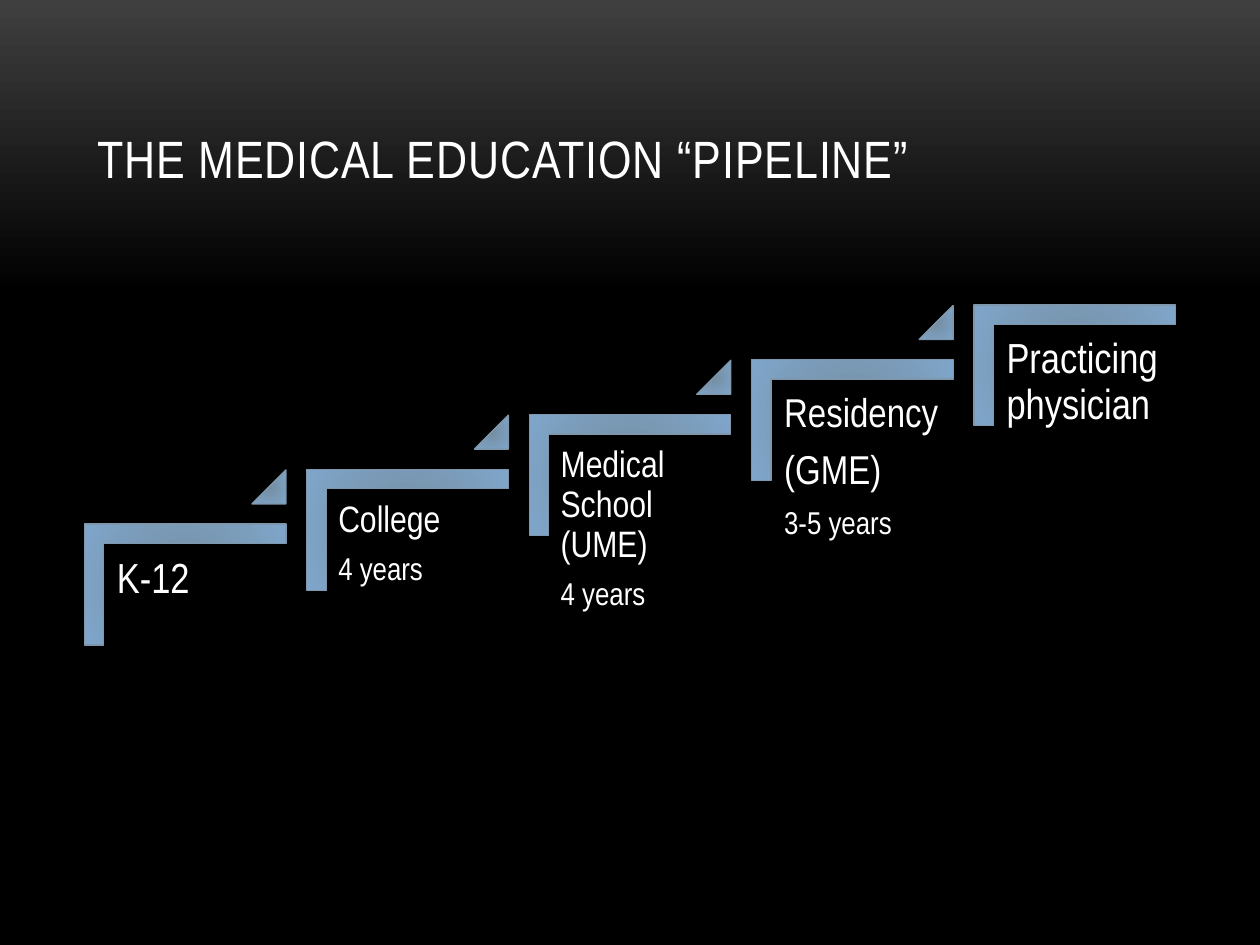
from typing import NamedTuple

from lxml.etree import SubElement
from pptx import Presentation
from pptx.dml.color import RGBColor
from pptx.enum.shapes import MSO_SHAPE as Preset
from pptx.enum.text import MSO_ANCHOR as Anchor, PP_ALIGN as Align
from pptx.oxml import parse_xml
from pptx.oxml.ns import nsdecls, qn
from pptx.util import Inches, Pt

FONT = "Arial Narrow"
WHITE = "FFFFFF"
FIRST_LEFT, FIRST_TOP = 0.99, 3.84
LAST_LEFT, LAST_TOP = 8.05, 2.1


class Line(NamedTuple):
    text: str
    size: int


class Step(NamedTuple):
    lines: list[Line]
    inset: float = 0.1


STEPS = [
    Step([Line("K-12", 24)]),
    Step([Line("College", 21), Line("4 years", 18)], 0.09),
    Step([Line("Medical School (UME)", 21), Line("4 years", 18)], 0.09),
    Step([Line("Residency", 23), Line("(GME)", 23), Line("3-5 years", 18)]),
    Step([Line("Practicing physician", 24)]),
]

GRADIENT = f"""<a:gradFill {nsdecls("a")} rotWithShape="1"><a:gsLst>
<a:gs pos="0"><a:srgbClr val="758DA1"/></a:gs>
<a:gs pos="100000"><a:srgbClr val="7FA6CA"/></a:gs></a:gsLst>
<a:path path="circle"><a:fillToRect l="100000" t="100000" r="100000" b="100000"/></a:path>
</a:gradFill>"""
SHADOW = f"""<a:outerShdw {nsdecls("a")} blurRad="50800" dist="43180" dir="5400000" rotWithShape="0">
<a:srgbClr val="000000"><a:alpha val="40000"/></a:srgbClr></a:outerShdw>"""


def color(value: str) -> RGBColor:
    return RGBColor.from_string(value)


def write(para, text: str, *, size: int, fill: str = WHITE, tracking: int = 0) -> None:
    span = para.add_run()
    span.text = text
    span.font.name = FONT
    span.font.size = Pt(size)
    span.font.color.rgb = color(fill)
    if tracking:
        span.font._element.set("spc", str(tracking))


def set_space_after(para, percent: int) -> None:
    spacing = SubElement(para._p.get_or_add_pPr(), qn("a:spcAft"))
    SubElement(spacing, qn("a:spcPct")).set("val", str(percent * 1000))


def draw_block(group, preset: Preset, left: float, top: float, width: float,
               height: float, adjustments: list[float], rotation: int = 0) -> None:
    block = group.shapes.add_shape(
        preset, Inches(left), Inches(top), Inches(width), Inches(height))
    block.rotation = rotation
    for index, value in enumerate(adjustments):
        block.adjustments[index] = value
    block.line.color.rgb = color("7E97AD")
    block.line.width = Pt(0.75)
    block.shadow.inherit = False
    properties = block._element.spPr
    properties.find(qn("a:prstGeom")).addnext(parse_xml(GRADIENT))
    properties.find(qn("a:effectLst")).append(parse_xml(SHADOW))


def draw_label(group, step: Step, left: float, top: float) -> None:
    box = group.shapes.add_textbox(Inches(left), Inches(top), Inches(1.44), Inches(1.26))
    frame = box.text_frame
    frame.word_wrap = True
    frame.margin_left = frame.margin_right = Inches(step.inset)
    frame.margin_top = frame.margin_bottom = Inches(step.inset)
    for index, line in enumerate(step.lines):
        para = frame.add_paragraph() if index else frame.paragraphs[0]
        para.line_spacing = 0.9
        set_space_after(para, 35)
        write(para, line.text, size=line.size)


def draw_title(page) -> None:
    title = page.shapes.title
    title.left, title.top = Inches(0.67), Inches(0.3)
    title.width, title.height = Inches(8.67), Inches(1.25)
    title.text_frame.vertical_anchor = Anchor.BOTTOM
    para = title.text_frame.paragraphs[0]
    para.alignment = Align.LEFT
    write(para, "THE MEDICAL EDUCATION “PIPELINE”", size=30, tracking=50)


def draw_background(page) -> None:
    fill = page.background.fill
    fill.gradient()
    fill.gradient_angle = 270
    for stop, position, value in zip(fill.gradient_stops, (0, 0.31), ("3F3F3F", "000000")):
        stop.position = position
        stop.color.rgb = color(value)


def draw_staircase(page) -> None:
    group = page.shapes.add_group_shape()
    last = len(STEPS) - 1
    for index, step in enumerate(STEPS):
        left = FIRST_LEFT + index * (LAST_LEFT - FIRST_LEFT) / last
        top = FIRST_TOP + index * (LAST_TOP - FIRST_TOP) / last
        draw_block(group, Preset.CORNER, left, top, 0.96, 1.6, [0.16, 0.16], rotation=90)
        draw_label(group, step, left - 0.16, top + 0.48)
        if index < last:
            draw_block(group, Preset.ISOSCELES_TRIANGLE, left + 1.01, top - 0.11,
                       0.27, 0.27, [1])


def main() -> None:
    deck = Presentation()
    deck.slide_width, deck.slide_height = Inches(10), Inches(7.5)
    page = deck.slides.add_slide(deck.slide_layouts[5])
    draw_background(page)
    draw_title(page)
    draw_staircase(page)
    deck.save("out.pptx")


if __name__ == "__main__":
    main()
